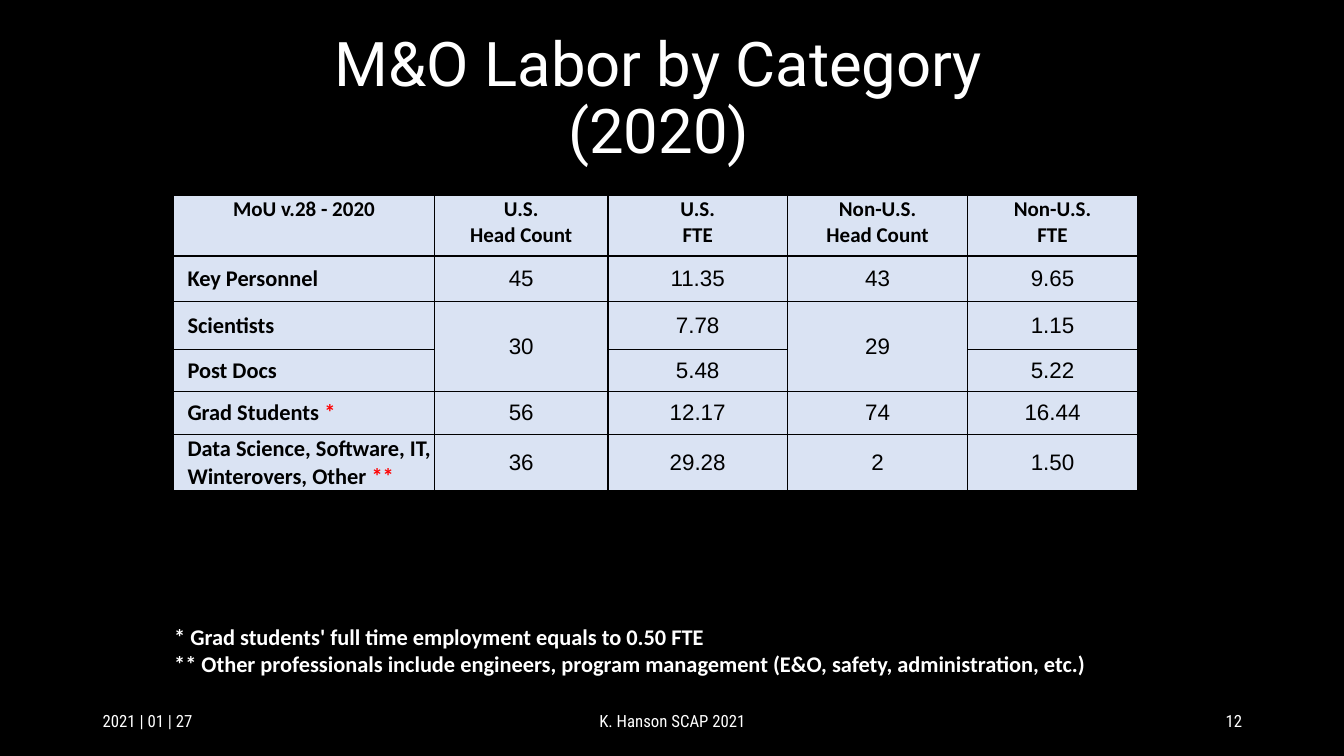
"""Build the slide on M&O labor by category in 2020."""
import pptx
import pptx.dml.color
import pptx.enum.text
import pptx.oxml
import pptx.oxml.ns
import pptx.util

Inches = pptx.util.Inches
Align = pptx.enum.text.PP_ALIGN
Anchor = pptx.enum.text.MSO_ANCHOR
AutoSize = pptx.enum.text.MSO_AUTO_SIZE

BLACK = pptx.dml.color.RGBColor(0x00, 0x00, 0x00)
WHITE = pptx.dml.color.RGBColor(0xFF, 0xFF, 0xFF)
RED = pptx.dml.color.RGBColor(0xFF, 0x00, 0x00)
PALE_BLUE = pptx.dml.color.RGBColor(0xDA, 0xE3, 0xF3)

COLUMN_WIDTHS = [2.59, 1.72, 1.78, 1.79, 1.68]
HEADER = ["MoU v.28 - 2020", "U.S.\nHead Count", "U.S.\nFTE",
          "Non-U.S.\nHead Count", "Non-U.S.\nFTE"]
STAFF_ROWS = [
    HEADER,
    ["Key Personnel", "45", "11.35", "43", "9.65"],
    ["Scientists", "30", "7.78", "29", "1.15"],
    ["Post Docs", "", "5.48", "", "5.22"],
    ["Grad Students *", "56", "12.17", "74", "16.44"],
]
OTHER_ROWS = [["Data Science, Software, IT, Winterovers, Other **", "36", "29.28", "2", "1.50"]]
FOOTNOTES = """* Grad students' full time employment equals to 0.50 FTE
** Other professionals include engineers, program management (E&O, safety, administration, etc.)"""


def set_font(paragraph, name, size, color, bold=False):
    """Format a whole paragraph."""
    font = paragraph.font
    font.name, font.size, font.bold = name, pptx.util.Pt(size), bold
    font.color.rgb = color


def add_text(slide, text, box, name, size, bold=False, align=Align.LEFT, anchor=Anchor.MIDDLE):
    """Add a white text box."""
    frame = slide.shapes.add_textbox(*map(Inches, box)).text_frame
    frame.word_wrap = True
    frame.vertical_anchor = anchor
    frame.text = text
    for paragraph in frame.paragraphs:
        paragraph.alignment = align
        set_font(paragraph, name, size, WHITE, bold)


def set_borders(cell):
    """Give a cell thin black borders."""
    properties = cell._tc.get_or_add_tcPr()
    for side in ("lnL", "lnR", "lnT", "lnB"):
        properties.append(pptx.oxml.parse_xml(
            f'<a:{side} {pptx.oxml.ns.nsdecls("a")} w="12700"><a:solidFill>'
            f'<a:srgbClr val="{BLACK}"/></a:solidFill></a:{side}>'))


def write_label(paragraph, label):
    """Write a row label with its footnote mark in red."""
    name = label.rstrip("*")
    paragraph.add_run().text = name
    if name != label:
        mark = paragraph.add_run()
        mark.text = label[len(name):]
        mark.font.color.rgb = RED
    paragraph._p.get_or_add_pPr().set("marL", str(Inches(0.13)))


def fill_cell(cell, text, is_header, is_label):
    """Write and format one table cell."""
    set_borders(cell)
    cell.fill.solid()
    cell.fill.fore_color.rgb = PALE_BLUE
    cell.margin_left = cell.margin_right = cell.margin_top = Inches(0.01)
    cell.margin_bottom = 0
    cell.vertical_anchor = Anchor.TOP if is_header else Anchor.MIDDLE
    if is_label:
        write_label(cell.text_frame.paragraphs[0], text)
    else:
        cell.text = text
    for paragraph in cell.text_frame.paragraphs:
        paragraph.alignment = Align.LEFT if is_label else Align.CENTER
        bold = is_header or is_label
        set_font(paragraph, "Calibri" if bold else "Arial", 15 if is_header else 16, BLACK, bold)


def add_labor_table(slide, rows, top, heights):
    """Add a labor table and return it."""
    table = slide.shapes.add_table(
        len(rows), len(COLUMN_WIDTHS), Inches(1.72), Inches(top),
        Inches(sum(COLUMN_WIDTHS)), Inches(sum(heights))).table
    for column, width in zip(table.columns, COLUMN_WIDTHS):
        column.width = Inches(width)
    for row, height, texts in zip(table.rows, heights, rows):
        row.height = Inches(height)
        is_header = texts is HEADER
        for index, (cell, text) in enumerate(zip(row.cells, texts)):
            fill_cell(cell, text, is_header, index == 0 and not is_header)
    return table


def format_title(title):
    """Place and format the slide title."""
    title.left, title.top, title.width, title.height = map(Inches, (2.3, 0.27, 8.47, 1.45))
    frame = title.text_frame
    frame.text = "M&O Labor by Category (2020)"
    frame.word_wrap = True
    frame.auto_size = AutoSize.NONE
    frame.vertical_anchor = Anchor.MIDDLE
    paragraph = frame.paragraphs[0]
    paragraph.alignment = Align.CENTER
    paragraph.line_spacing = 0.9
    set_font(paragraph, "Roboto", 44, WHITE)


def main():
    """Build and save the slide."""
    presentation = pptx.Presentation()
    presentation.slide_width, presentation.slide_height = Inches(13.33), Inches(7.5)
    slide = presentation.slides.add_slide(presentation.slide_layouts[5])
    slide.background.fill.solid()
    slide.background.fill.fore_color.rgb = BLACK
    format_title(slide.shapes.title)

    staff_table = add_labor_table(slide, STAFF_ROWS, 1.94, [0.6, 0.45, 0.48, 0.41, 0.43])
    for column in (1, 3):
        staff_table.cell(2, column).merge(staff_table.cell(3, column))
    add_labor_table(slide, OTHER_ROWS, 4.31, [0.54])

    add_text(slide, FOOTNOTES, (1.63, 6.13, 10.23, 0.64), "Calibri", 16, True, anchor=Anchor.TOP)
    for text, left, width, align in (
            ("2021 | 01 | 27", 0.92, 3, Align.LEFT),
            ("K. Hanson SCAP 2021", 4.42, 4.5, Align.CENTER),
            ("12", 9.42, 3, Align.RIGHT)):
        add_text(slide, text, (left, 6.95, width, 0.4), "Roboto Condensed", 12, align=align)
    presentation.save("out.pptx")


if __name__ == "__main__":
    main()
